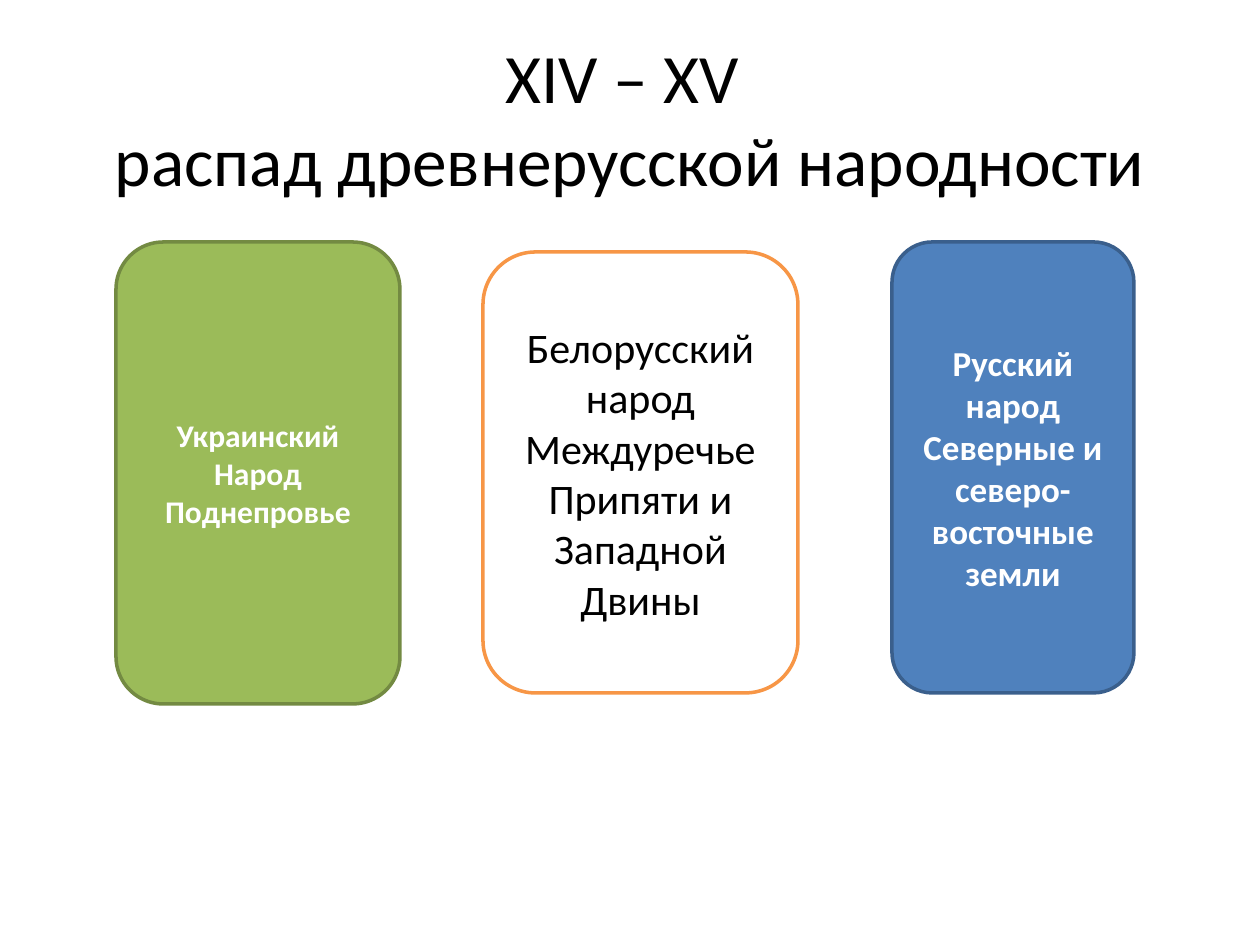
"""Build a slide on the split of the Old Rus people into three nations."""
from dataclasses import dataclass

from pptx import Presentation
from pptx.dml.color import RGBColor
from pptx.enum.shapes import MSO_SHAPE as Shape
from pptx.enum.text import MSO_ANCHOR as Anchor, MSO_AUTO_SIZE as AutoSize, PP_ALIGN as Align
from pptx.util import Emu, Pt


@dataclass(frozen=True)
class Theme:
    font: str = "Calibri"
    black: str = "000000"
    white: str = "FFFFFF"
    green: str = "9BBB59"
    dark_green: str = "738A42"
    orange: str = "F79646"
    blue: str = "4F81BD"
    dark_blue: str = "3A5F8C"
    title_size: float = 39.6
    small_size: int = 18
    medium_size: int = 20
    large_size: int = 24
    line_width: int = 2


theme = Theme()


def px(value):
    return Emu(round(value * 914400 / 126))


def write(shape, lines, size, color, bold):
    frame = shape.text_frame
    frame.word_wrap = True
    frame.auto_size = AutoSize.NONE
    frame.vertical_anchor = Anchor.MIDDLE
    frame.text = "\n".join(lines)
    for paragraph in frame.paragraphs:
        paragraph.alignment = Align.CENTER
        paragraph.font.name = theme.font
        paragraph.font.size = Pt(size)
        paragraph.font.bold = bold
        paragraph.font.color.rgb = RGBColor.from_string(color)


presentation = Presentation()
presentation.slide_width, presentation.slide_height = px(1260), px(945)
slide = presentation.slides.add_slide(presentation.slide_layouts[5])

title = slide.shapes.title
title.left, title.top, title.width, title.height = px(63), px(38), px(1134), px(158)
write(title, ["XIV – XV \vраспад древнерусской народности"],
      theme.title_size, theme.black, False)

nations = [
    ((116, 242, 284, 462), theme.green, theme.dark_green, theme.white, theme.small_size, True,
     ["Украинский", "Народ", "Поднепровье"]),
    ((483, 252, 315, 441), theme.white, theme.orange, theme.black, theme.large_size, False,
     ["Белорусский народ", "Междуречье Припяти и Западной Двины"]),
    ((892, 242, 242, 451), theme.blue, theme.dark_blue, theme.white, theme.medium_size, True,
     ["Русский народ", "Северные и северо-восточные земли"]),
]
for box, fill, line, color, size, bold, lines in nations:
    nation = slide.shapes.add_shape(Shape.ROUNDED_RECTANGLE, *map(px, box))
    nation.shadow.inherit = False
    nation.fill.solid()
    nation.fill.fore_color.rgb = RGBColor.from_string(fill)
    nation.line.color.rgb = RGBColor.from_string(line)
    nation.line.width = Pt(theme.line_width)
    write(nation, lines, size, color, bold)

presentation.save("out.pptx")
